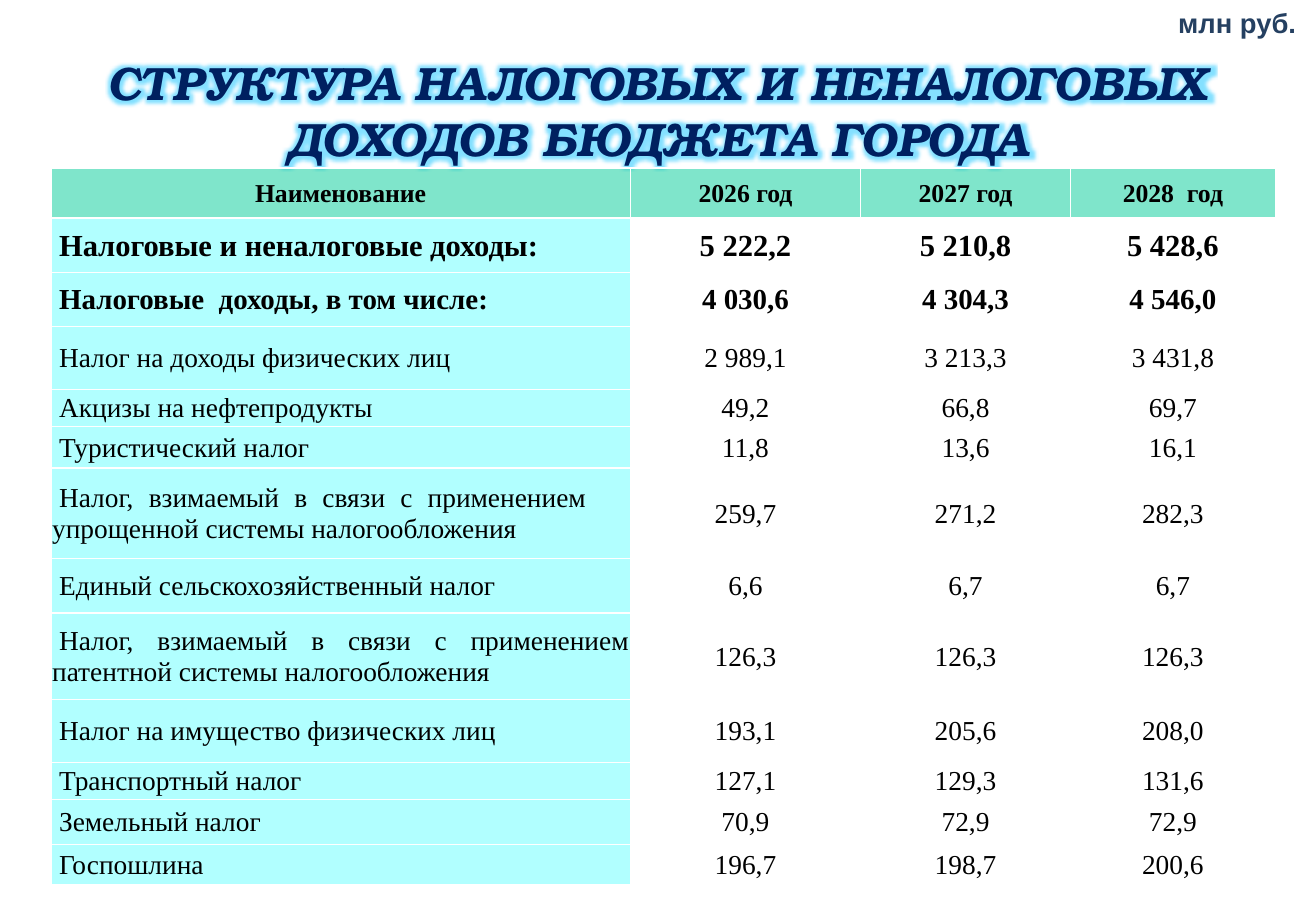
from dataclasses import dataclass

from lxml import etree
from pptx import Presentation
from pptx.dml.color import RGBColor
from pptx.enum.text import MSO_ANCHOR, MSO_AUTO_SIZE, PP_ALIGN
from pptx.oxml import parse_xml
from pptx.oxml.ns import nsdecls, qn
from pptx.util import Inches, Pt

CENTER, JUSTIFY = PP_ALIGN.CENTER, PP_ALIGN.JUSTIFY
MIDDLE = MSO_ANCHOR.MIDDLE
NO_AUTOFIT = MSO_AUTO_SIZE.NONE


@dataclass(frozen=True)
class Theme:
    title_color: str = "002060"
    glow_color: str = "33CCFF"
    unit_color: str = "254061"
    text_color: str = "000000"
    header_fill: str = "00CC99"
    name_fill: str = "65FFFF"
    title_font: str = "TeX Gyre Bonum"
    unit_font: str = "Arial"
    table_font: str = "Times New Roman"
    title_size: int = 29
    unit_size: int = 17
    header_size: int = 16
    total_size: int = 19
    subtotal_size: int = 18
    item_size: int = 17


theme = Theme()


def style_paragraph(paragraph, font_name, size, color, bold, italic=False):
    font = paragraph.font
    font.name = font_name
    font.size = Pt(size)
    font.bold = bold
    font.italic = italic
    font.color.rgb = RGBColor.from_string(color)


def fill_half_transparent(cell, color):
    cell.fill.solid()
    cell.fill.fore_color.rgb = RGBColor.from_string(color)
    tint = cell._tc.tcPr.find(".//" + qn("a:srgbClr"))
    etree.SubElement(tint, qn("a:alpha")).set("val", "50000")


HEADINGS = ("Наименование", "2026 год", "2027 год", "2028  год")
REVENUES = [
    (0.47, "Налоговые и неналоговые доходы:", "5 222,2", "5 210,8", "5 428,6"),
    (0.47, "Налоговые  доходы, в том числе:", "4 030,6", "4 304,3", "4 546,0"),
    (0.54, "Налог на доходы физических лиц", "2 989,1", "3 213,3", "3 431,8"),
    (0.32, "Акцизы на нефтепродукты", "49,2", "66,8", "69,7"),
    (0.36, "Туристический налог", "11,8", "13,6", "16,1"),
    (0.78, "Налог, взимаемый в связи с применением упрощенной системы налогообложения",
     "259,7", "271,2", "282,3"),
    (0.47, "Единый сельскохозяйственный налог", "6,6", "6,7", "6,7"),
    (0.75, "Налог, взимаемый в связи с применением патентной системы налогообложения",
     "126,3", "126,3", "126,3"),
    (0.54, "Налог на имущество физических лиц", "193,1", "205,6", "208,0"),
    (0.32, "Транспортный налог", "127,1", "129,3", "131,6"),
    (0.39, "Земельный налог", "70,9", "72,9", "72,9"),
    (0.35, "Госпошлина", "196,7", "198,7", "200,6"),
]
SIMPLIFIED_TAX_ROW = 6
COLUMN_WIDTHS = (5, 1.99, 1.81, 1.77)

presentation = Presentation()
presentation.slide_width = Inches(11.36)
presentation.slide_height = Inches(7.93)
slide = presentation.slides.add_slide(presentation.slide_layouts[5])

title = slide.shapes.title
title.left, title.top = Inches(0), Inches(0.38)
title.width, title.height = Inches(11.36), Inches(1.13)
title.text_frame.text = "СТРУКТУРА НАЛОГОВЫХ И НЕНАЛОГОВЫХ\nДОХОДОВ БЮДЖЕТА ГОРОДА"
title.text_frame.auto_size = NO_AUTOFIT
title.text_frame.vertical_anchor = MIDDLE
for line in title.text_frame.paragraphs:
    line.alignment = CENTER
    style_paragraph(line, theme.title_font, theme.title_size, theme.title_color, True, True)
    glow = parse_xml(
        f'<a:effectLst {nsdecls("a")}><a:glow rad="101600">'
        f'<a:srgbClr val="{theme.glow_color}"><a:alpha val="60000"/></a:srgbClr>'
        '</a:glow></a:effectLst>'
    )
    line.runs[0]._r.get_or_add_rPr().append(glow)

unit = slide.shapes.add_textbox(Inches(10.05), Inches(-0.01), Inches(1.28), Inches(0.41))
unit.text_frame.margin_left = unit.text_frame.margin_right = Inches(0.12)
unit.text_frame.margin_top = unit.text_frame.margin_bottom = Inches(0.06)
unit.text_frame.word_wrap = False
unit.text_frame.text = "млн руб."
style_paragraph(unit.text_frame.paragraphs[0], theme.unit_font, theme.unit_size,
                theme.unit_color, True)

table_rows = [(0.43, *HEADINGS), *REVENUES]
row_sizes = [theme.header_size, theme.total_size, theme.subtotal_size]
row_sizes += [theme.item_size] * (len(table_rows) - len(row_sizes))
revenue_table = slide.shapes.add_table(
    len(table_rows), len(COLUMN_WIDTHS), Inches(0.44), Inches(1.45),
    Inches(sum(COLUMN_WIDTHS)), Inches(sum(row[0] for row in table_rows)),
).table
revenue_table.first_row = False
revenue_table.horz_banding = False
for column, width in zip(revenue_table.columns, COLUMN_WIDTHS):
    column.width = Inches(width)

for row_index, ((height, *entries), size) in enumerate(zip(table_rows, row_sizes)):
    revenue_table.rows[row_index].height = Inches(height)
    for column_index, entry in enumerate(entries):
        cell = revenue_table.cell(row_index, column_index)
        cell.margin_left = cell.margin_right = cell.margin_top = Inches(0.01)
        cell.margin_bottom = 0
        cell.vertical_anchor = MIDDLE
        cell.text = entry
        paragraph = cell.text_frame.paragraphs[0]
        paragraph.alignment = CENTER
        if row_index == 0:
            fill_half_transparent(cell, theme.header_fill)
        elif column_index == 0:
            fill_half_transparent(cell, theme.name_fill)
            paragraph.alignment = JUSTIFY
            paragraph._p.get_or_add_pPr().set("indent", str(Inches(0.06)))
            if row_index == SIMPLIFIED_TAX_ROW:
                cell.margin_right = Inches(0.38)
        else:
            cell.fill.background()
        style_paragraph(paragraph, theme.table_font, size, theme.text_color, row_index < 3)

presentation.save("out.pptx")
